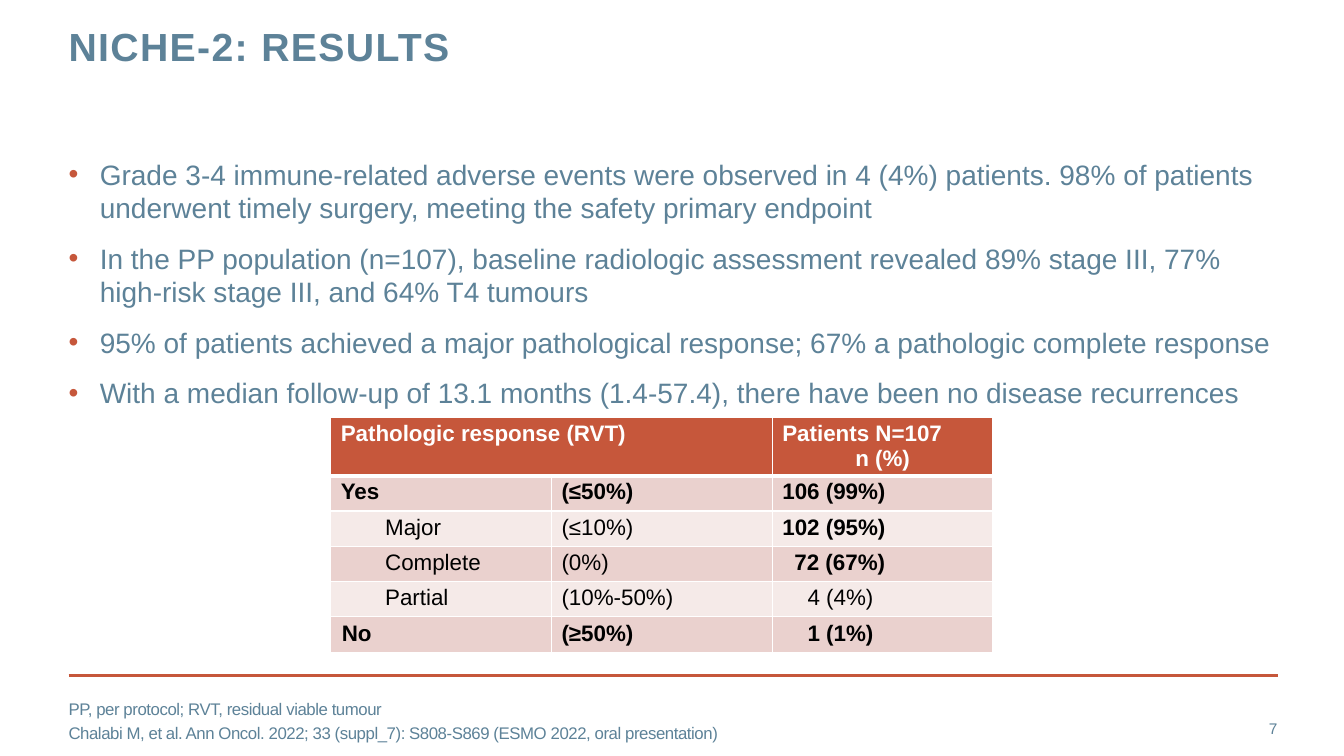
from dataclasses import dataclass
from typing import Any

from lxml import etree
from pptx import Presentation
from pptx.dml.color import RGBColor
from pptx.enum import shapes, text
from pptx.oxml import ns
from pptx.util import Inches, Pt


@dataclass(frozen=True)
class Theme:
    font: str = "Arial"
    slate: str = "5D8298"
    rust: str = "C6573B"
    white: str = "FFFFFF"
    black: str = "000000"
    bands: tuple[str, str] = ("EAD1CE", "F5EAE8")
    title: int = 28
    body: int = 20
    table: int = 16
    notes: int = 12
    number: int = 11


@dataclass(frozen=True)
class TextBlock:
    box: tuple[float, float, float, float]
    lines: tuple[str, ...]
    size: int
    space_before: int = 0
    spacing: float = 0
    bulleted: bool = False
    anchor: Any = text.MSO_ANCHOR.TOP
    align: Any = text.PP_ALIGN.LEFT


@dataclass(frozen=True)
class Response:
    label: str
    threshold: str
    patients: str
    label_indent: float = 0
    patients_indent: float = 0
    label_bold: bool = True
    patients_bold: bool = True


THEME = Theme()
LEFT, RIGHT = 0.68, 12.68

BULLETS = TextBlock(
    (LEFT, 1.56, 11.99, 1.01),
    (
        "Grade 3-4 immune-related adverse events were observed in 4 (4%) patients. "
        "98% of patients underwent timely surgery, meeting the safety primary endpoint",
        "In the PP population (n=107), baseline radiologic assessment revealed "
        "89% stage III, 77% high-risk stage III, and 64% T4 tumours",
        "95% of patients achieved a major pathological response; "
        "67% a pathologic complete response",
        "With a median follow-up of 13.1 months (1.4-57.4), "
        "there have been no disease recurrences",
    ),
    THEME.body, space_before=12, bulleted=True,
)
PAGE_NUMBER = TextBlock(
    (11.81, 7.03, 0.86, 0.4), ("7",), THEME.number,
    anchor=text.MSO_ANCHOR.MIDDLE, align=text.PP_ALIGN.RIGHT,
)
FOOTNOTES = TextBlock(
    (LEFT, 6.95, 11.13, 0.4),
    (
        "PP, per protocol; RVT, residual viable tumour",
        "Chalabi M, et al. Ann Oncol. 2022; 33 (suppl_7): S808-S869 "
        "(ESMO 2022, oral presentation)",
    ),
    THEME.notes, space_before=3, spacing=-0.3, anchor=text.MSO_ANCHOR.MIDDLE,
)
RESPONSES = (
    Response("Yes", "(≤50%)", "106 (99%)"),
    Response("Major", "(≤10%)", "102 (95%)", 0.44, label_bold=False),
    Response("Complete", "(0%)", "72 (67%)", 0.44, 0.12, label_bold=False),
    Response("Partial", "(10%-50%)", "4 (4%)", 0.44, 0.25, False, False),
    Response("No", "(≥50%)", "1 (1%)", 0.01, 0.25),
)


def assign(target: Any, values: dict[str, Any]) -> None:
    for name, value in values.items():
        setattr(target, name, value)


def style_paragraph(paragraph: Any, size: int, color: str, bold: bool = False,
                    spacing: float = 0) -> None:
    """Format the paragraph's runs; spacing is the letter spacing in points."""
    for run in paragraph.runs:
        assign(run.font, {"name": THEME.font, "size": Pt(size), "bold": bold})
        run.font.color.rgb = RGBColor.from_string(color)
        if spacing:
            run.font._element.set("spc", str(round(spacing * 100)))


def indent(paragraph: Any, margin: float, first: float = 0) -> None:
    properties = paragraph._p.get_or_add_pPr()
    properties.set("marL", str(Inches(margin)))
    properties.set("indent", str(Inches(first)))


def add_bullet(paragraph: Any) -> None:
    indent(paragraph, 0.31, -0.31)
    properties = paragraph._p.get_or_add_pPr()
    color = etree.SubElement(properties, ns.qn("a:buClr"))
    etree.SubElement(color, ns.qn("a:srgbClr"), val=THEME.rust)
    etree.SubElement(properties, ns.qn("a:buFont"), typeface=THEME.font)
    etree.SubElement(properties, ns.qn("a:buChar"), char="•")


def format_frame(frame: Any, anchor: Any) -> None:
    margins = {f"margin_{side}": 0 for side in ("left", "right", "top", "bottom")}
    assign(frame, margins | {"word_wrap": True, "vertical_anchor": anchor,
                             "auto_size": text.MSO_AUTO_SIZE.NONE})


def add_text(slide: Any, block: TextBlock) -> None:
    frame = slide.shapes.add_textbox(*map(Inches, block.box)).text_frame
    format_frame(frame, block.anchor)
    frame.text = "\n".join(block.lines)
    for index, paragraph in enumerate(frame.paragraphs):
        if block.bulleted:
            add_bullet(paragraph)
        paragraph.alignment = block.align
        if index:
            paragraph.space_before = Pt(block.space_before)
        style_paragraph(paragraph, block.size, THEME.slate, spacing=block.spacing)


def add_title(slide: Any) -> None:
    title = slide.shapes.title
    assign(title, {"left": Inches(LEFT), "top": Inches(0.27),
                   "width": Inches(9.56), "height": Inches(0.88)})
    format_frame(title.text_frame, text.MSO_ANCHOR.TOP)
    title.text_frame.text = "NICHE-2: RESULTS"
    heading = title.text_frame.paragraphs[0]
    assign(heading, {"alignment": text.PP_ALIGN.LEFT, "line_spacing": Pt(30)})
    style_paragraph(heading, THEME.title, THEME.slate, bold=True, spacing=1)


def add_rule(slide: Any) -> None:
    rule = slide.shapes.add_connector(
        shapes.MSO_CONNECTOR.STRAIGHT,
        Inches(LEFT), Inches(6.7), Inches(RIGHT), Inches(6.7))
    rule.line.color.rgb = RGBColor.from_string(THEME.rust)
    rule.line.width = Pt(2)
    etree.SubElement(rule._element.spPr, ns.qn("a:effectLst"))


def format_cell(cell: Any, fill: str, top: int = 1, bottom: int = 1) -> None:
    """Give the cell a fill and white borders; top and bottom are in points."""
    assign(cell, {"margin_top": Inches(0.04), "margin_bottom": Inches(0.04)})
    properties = cell._tc.get_or_add_tcPr()
    for side, width in {"L": 1, "R": 1, "T": top, "B": bottom}.items():
        border = etree.SubElement(properties, ns.qn(f"a:ln{side}"), w=str(Pt(width)))
        solid = etree.SubElement(border, ns.qn("a:solidFill"))
        etree.SubElement(solid, ns.qn("a:srgbClr"), val=THEME.white)
    cell.fill.solid()
    cell.fill.fore_color.rgb = RGBColor.from_string(fill)


def add_response_table(slide: Any) -> None:
    heights = [0.58] + [0.35] * len(RESPONSES)
    table = slide.shapes.add_table(
        len(heights), 3, Inches(3.28), Inches(4.14),
        Inches(6.57), Inches(sum(heights))).table
    for row, height in zip(table.rows, heights):
        row.height = Inches(height)

    table.cell(0, 0).merge(table.cell(0, 1))
    headings = ("Pathologic response (RVT)", "", "Patients N=107\nn (%)")
    for column, heading in enumerate(headings):
        cell = table.cell(0, column)
        format_cell(cell, THEME.rust, bottom=3)
        if heading:
            cell.text = heading
        for paragraph in cell.text_frame.paragraphs:
            style_paragraph(paragraph, THEME.table, THEME.white, bold=True)
    table.cell(0, 2).text_frame.paragraphs[1].alignment = text.PP_ALIGN.CENTER

    for row, response in enumerate(RESPONSES, start=1):
        entries = (
            (response.label, response.label_indent, response.label_bold),
            (response.threshold, 0, response.label_bold),
            (response.patients, response.patients_indent, response.patients_bold),
        )
        for column, (entry, margin, bold) in enumerate(entries):
            cell = table.cell(row, column)
            format_cell(cell, THEME.bands[(row - 1) % 2], top=3 if row == 1 else 1)
            cell.text = entry
            paragraph = cell.text_frame.paragraphs[0]
            indent(paragraph, margin)
            style_paragraph(paragraph, THEME.table, THEME.black, bold)


def main() -> None:
    deck = Presentation()
    assign(deck, {"slide_width": Inches(13.33), "slide_height": Inches(7.5)})
    slide = deck.slides.add_slide(deck.slide_layouts[5])
    add_rule(slide)
    add_title(slide)
    for block in (BULLETS, PAGE_NUMBER, FOOTNOTES):
        add_text(slide, block)
    add_response_table(slide)
    deck.save("out.pptx")


if __name__ == "__main__":
    main()
